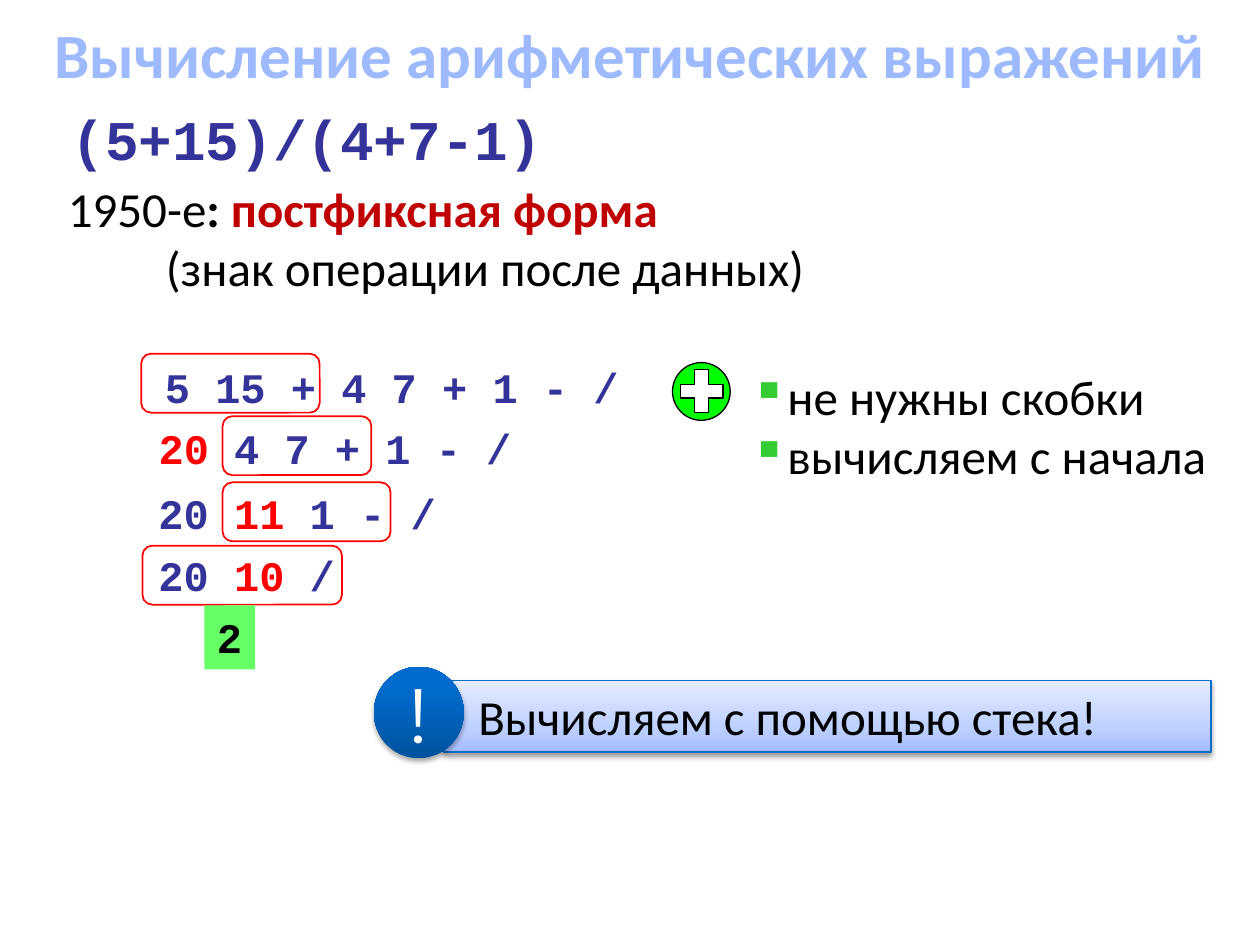
from copy import deepcopy

from lxml import etree
from pptx import Presentation
from pptx.dml.color import RGBColor
from pptx.enum.shapes import MSO_SHAPE
from pptx.enum.text import MSO_ANCHOR, PP_ALIGN
from pptx.oxml.ns import qn
from pptx.util import Pt

COLORS = {
    "title": "9EBAFF", "text": "000000", "white": "FFFFFF", "code": "333399",
    "term": "C00000", "result": "FF0000", "bullet": "33CC33",
    "plus": "00FF00", "answer": "66FF66", "banner_line": "0A6DC6",
}
BANNER_STOPS = [(0, "A3BDFF"), (0.35, "BED0FF"), (1, "E6EDFF")]
BADGE_STOPS = [(0, "00539F"), (0.8, "006CCE"), (1, "006DCF")]


def rgb(name):
    return RGBColor.from_string(COLORS[name])


class SlideBuilder:
    body_font, code_font, badge_font = "Calibri", "Courier New", "Montserrat"
    body_size, code_size = 28, 24

    def __init__(self, slide):
        self.slide = slide

    def add_runs(self, paragraph, runs, size, font):
        """Each run is (text, colour name, bold)."""
        for words, color, bold in runs:
            run = paragraph.add_run()
            run.text = words
            run.font.name, run.font.size, run.font.bold = font, Pt(size), bold
            run.font.color.rgb = rgb(color)

    def indent(self, paragraph, left, first=0):
        properties = paragraph._p.get_or_add_pPr()
        properties.set("marL", str(Pt(left)))
        properties.set("indent", str(Pt(first)))
        return properties

    def title(self, words, left, top, width, height):
        title = self.slide.shapes.title
        title.left, title.top, title.width, title.height = map(Pt, (left, top, width, height))
        title.text_frame.vertical_anchor = MSO_ANCHOR.MIDDLE
        paragraph = title.text_frame.paragraphs[0]
        paragraph.alignment = PP_ALIGN.CENTER
        self.add_runs(paragraph, [(words, "title", True)], 36, self.body_font)

    def text(self, lines, left, top, width, height):
        box = self.slide.shapes.add_textbox(*map(Pt, (left, top, width, height)))
        frame = box.text_frame
        frame.word_wrap = True
        for index, runs in enumerate(lines):
            paragraph = frame.add_paragraph() if index else frame.paragraphs[0]
            self.add_runs(paragraph, runs, self.body_size, self.body_font)
        return frame.paragraphs

    def bullets(self, items, *place):
        for paragraph in self.text([[(item, "text", False)] for item in items], *place):
            properties = self.indent(paragraph, 13.5, -13.5)
            color = etree.SubElement(properties, qn("a:buClr"))
            etree.SubElement(color, qn("a:srgbClr"), val=COLORS["bullet"])
            etree.SubElement(properties, qn("a:buChar"), char="▪")

    def code(self, runs, left, top, width, height, size=code_size):
        box = self.slide.shapes.add_textbox(*map(Pt, (left, top, width, height)))
        box.text_frame.word_wrap = False
        bold_runs = [(words, color, True) for words, color in runs]
        self.add_runs(box.text_frame.paragraphs[0], bold_runs, size, self.code_font)

    def shape(self, kind, left, top, width, height, fill=None, line=None, weight=0.75):
        shape = self.slide.shapes.add_shape(kind, *map(Pt, (left, top, width, height)))
        shape.shadow.inherit = False
        if fill:
            shape.fill.solid()
            shape.fill.fore_color.rgb = rgb(fill)
        else:
            shape.fill.background()
        if line:
            shape.line.color.rgb = rgb(line)
            shape.line.width = Pt(weight)
        else:
            shape.line.fill.background()
        return shape

    def gradient(self, shape, stops):
        shape.fill.gradient()
        shape.fill.gradient_angle = 90
        stop_list = shape._element.spPr.find(".//" + qn("a:gsLst"))
        stop_list.append(deepcopy(stop_list[0]))
        for stop, (position, color) in zip(shape.fill.gradient_stops, stops):
            stop.position = position
            stop.color.rgb = RGBColor.from_string(color)

    def drop_shadow(self, shape, opacity):
        effects = shape._element.spPr.find(qn("a:effectLst"))
        shadow = etree.SubElement(effects, qn("a:outerShdw"), blurRad=str(Pt(3.1)),
                                  dist=str(Pt(1.7)), dir="5400000", rotWithShape="0")
        color = etree.SubElement(shadow, qn("a:srgbClr"), val=COLORS["text"])
        etree.SubElement(color, qn("a:alpha"), val=str(opacity * 1000))

    def label(self, shape, words, color, size, font, bold=False,
              align=PP_ALIGN.LEFT, anchor=MSO_ANCHOR.TOP, wrap=False):
        frame = shape.text_frame
        frame.word_wrap, frame.vertical_anchor = wrap, anchor
        paragraph = frame.paragraphs[0]
        paragraph.alignment = align
        self.add_runs(paragraph, [(words, color, bold)], size, font)
        return paragraph


def main():
    presentation = Presentation()
    presentation.slide_width, presentation.slide_height = Pt(720), Pt(540)
    builder = SlideBuilder(presentation.slides.add_slide(presentation.slide_layouts[5]))

    # Title, expression and definition
    builder.title("Вычисление арифметических выражений", 0, 0, 720, 61)
    builder.code([("(5+15)/(4+7-1)", "code")], 33.8, 56.2, 306, 46, size=32)
    definition = builder.text([
        [("1950-е", "text", False), (": ", "text", True),
         ("постфиксная форма", "term", True)],
        [("(знак операции после данных)", "text", False)],
    ], 31.7, 98.6, 646, 75)
    builder.indent(definition[1], 56)

    # Advantages with a plus sign
    builder.shape(MSO_SHAPE.OVAL, 384.3, 207.2, 33, 33, "plus", "text")
    plus = builder.shape(MSO_SHAPE.CROSS, 388.7, 211.3, 24.5, 24.5, "white", "text")
    plus.adjustments[0] = 0.34
    builder.bullets(["не нужны скобки", "вычисляем с начала"], 422, 206, 298, 75.6)

    # Evaluation steps: runs, text left, top, width, frame left, top, width
    steps = [
        ([("5 15 + 4 7 + 1 - /", "code")], 87.1, 203, 276, 80.7, 202.1, 102),
        ([("20", "result"), (" 4 7 + 1 - /", "code")],
         83.5, 237.8, 217.5, 127.2, 237.8, 85),
        ([("20 ", "code"), ("11", "result"), (" 1 - /", "code")],
         83.5, 275, 174, 127.2, 275.6, 96),
        ([("20 ", "code"), ("10", "result"), (" /", "code")],
         83.5, 310.5, 116, 81.4, 311.8, 114),
    ]
    for runs, left, top, width, frame_left, frame_top, frame_width in steps:
        builder.code(runs, left, top, width, 36.5)
        builder.shape(MSO_SHAPE.ROUNDED_RECTANGLE, frame_left, frame_top,
                      frame_width, 33.7, line="result", weight=1)

    # Answer
    answer = builder.shape(MSO_SHAPE.RECTANGLE, 116.8, 346, 29, 36.5, "answer")
    builder.label(answer, "2", "text", builder.code_size, builder.code_font, bold=True)

    # Conclusion banner with its badge
    banner = builder.shape(MSO_SHAPE.RECTANGLE, 253.5, 388.8, 438.5, 41, line="banner_line")
    builder.gradient(banner, BANNER_STOPS)
    builder.drop_shadow(banner, 38)
    conclusion = builder.label(banner, "Вычисляем с помощью стека!", "text",
                               builder.body_size, builder.body_font, wrap=True)
    builder.indent(conclusion, 12.7)
    badge = builder.shape(MSO_SHAPE.OVAL, 213.7, 381, 51.3, 52.3)
    builder.gradient(badge, BADGE_STOPS)
    builder.drop_shadow(badge, 35)
    builder.label(badge, "!", "white", 44, builder.badge_font,
                  align=PP_ALIGN.CENTER, anchor=MSO_ANCHOR.MIDDLE)

    presentation.save("out.pptx")


if __name__ == "__main__":
    main()
